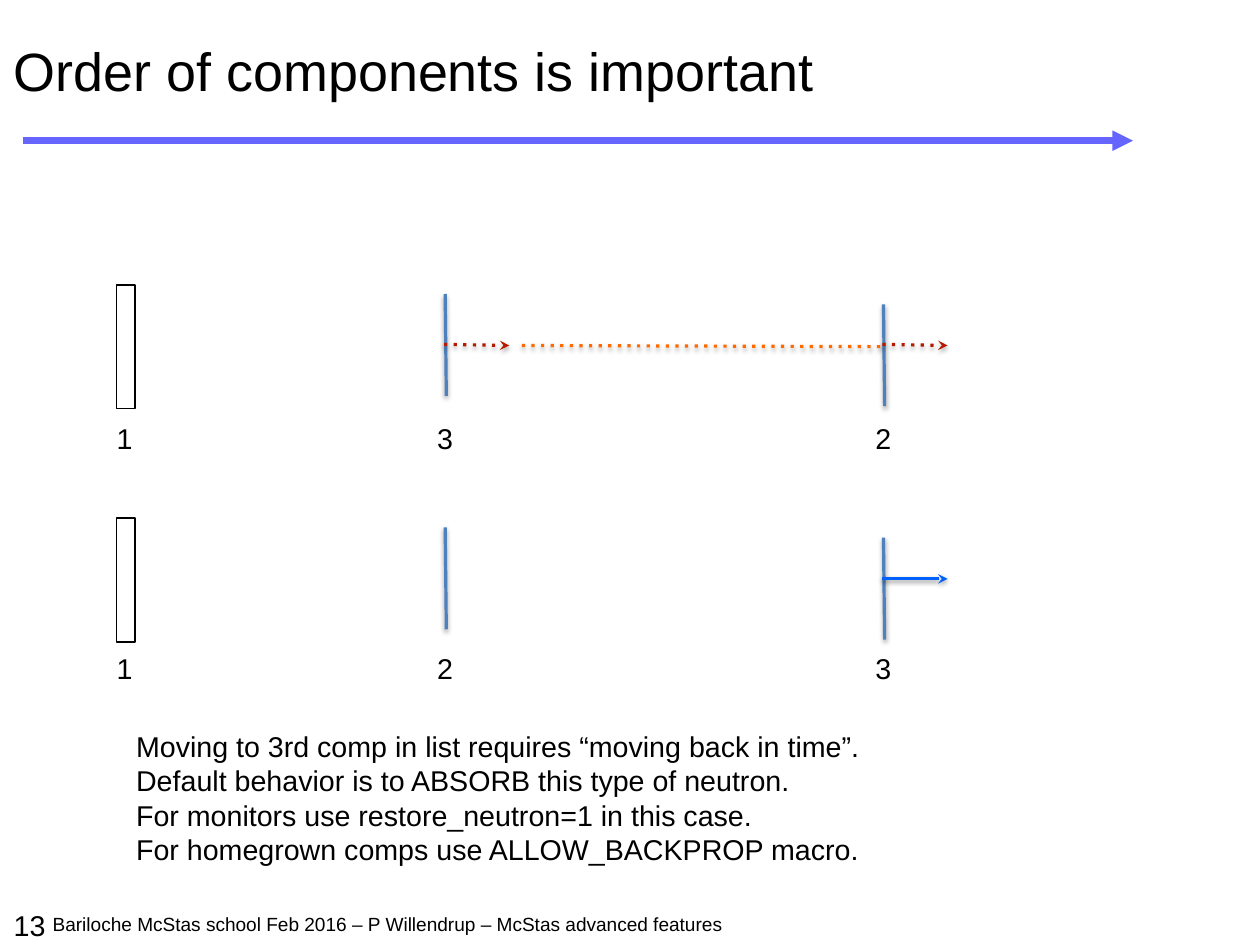
from dataclasses import dataclass

import pptx
import pptx.dml.color
import pptx.enum.shapes
import pptx.enum.text
import pptx.oxml
import pptx.oxml.ns
import pptx.util
from pptx.util import Inches

RGBColor = pptx.dml.color.RGBColor
BLACK = RGBColor(0x00, 0x00, 0x00)
VIOLET = RGBColor(0x66, 0x66, 0xFF)
STEEL_BLUE = RGBColor(0x4F, 0x81, 0xBD)
DARK_RED = RGBColor(0xB5, 0x1A, 0x00)
ORANGE = RGBColor(0xFF, 0x6A, 0x00)
BRIGHT_BLUE = RGBColor(0x00, 0x61, 0xFF)

NAMESPACE = pptx.oxml.ns.nsdecls("a")
SHADOW = (
    f'<a:effectLst {NAMESPACE}><a:outerShdw blurRad="38100" dist="20320" dir="5400000" '
    'rotWithShape="0"><a:srgbClr val="000000"><a:alpha val="38000"/></a:srgbClr>'
    "</a:outerShdw></a:effectLst>"
)
NO_SHADOW = f"<a:effectLst {NAMESPACE}/>"
DOTS = f'<a:custDash {NAMESPACE}><a:ds d="100000" sp="200000"/></a:custDash>'

SOURCE_LEFT, SOURCE_WIDTH, SOURCE_HEIGHT = 1.02, 0.16, 1.08
COMPONENT_HEIGHT = 0.89
LABEL_LEFTS = (0.99, 3.79, 7.62)
EXPLANATION = (
    "Moving to 3rd comp in list requires “moving back in time”.",
    "Default behavior is to ABSORB this type of neutron.",
    "For monitors use restore_neutron=1 in this case.",
    "For homegrown comps use ALLOW_BACKPROP macro.",
)


@dataclass(frozen=True)
class Ray:
    start: tuple[float, float]
    end: tuple[float, float]
    color: RGBColor
    width: float = 2
    arrow: str = ""
    dotted: bool = False
    shadow: bool = True


@dataclass(frozen=True)
class Beamline:
    top: float
    label_top: float
    labels: tuple[str, str, str]
    rays: tuple[Ray, ...]


@dataclass(frozen=True)
class Caption:
    left: float
    top: float
    width: float
    height: float
    lines: tuple[str, ...]
    size: float = 18
    inset: float = 0.03


BEAMLINES = (
    Beamline(2.49, 3.65, ("1", "3", "2"), (
        Ray((7.71, 3.01), (8.28, 3.02), DARK_RED, arrow="stealth", dotted=True),
        Ray((3.88, 3.01), (4.45, 3.02), DARK_RED, arrow="stealth", dotted=True),
        Ray((4.56, 3.02), (7.73, 3.03), ORANGE, dotted=True),
    )),
    Beamline(4.53, 5.66, ("1", "2", "3"), (
        Ray((7.71, 5.06), (8.28, 5.06), BRIGHT_BLUE, arrow="stealth"),
    )),
)
TITLE_ARROW = Ray((0.2, 1.23), (9.9, 1.23), VIOLET, 4.31, "triangle", shadow=False)
CAPTIONS = (
    Caption(0.41, 7.93, 5.98, 0.29,
            ("Bariloche McStas school Feb 2016 – P Willendrup – McStas advanced features",),
            size=12, inset=0.05),
    Caption(0.07, 7.89, 0.39, 0.38, ("13",), inset=0.05),
    Caption(1.16, 6.34, 7.64, 1.31, EXPLANATION),
)


def apply_format(target: object, values: dict[str, object]) -> None:
    for name, value in values.items():
        setattr(target, name, value)


def format_text(frame: pptx.text.text.TextFrame, size: float, inset: float,
                anchor: pptx.enum.text.MSO_ANCHOR, wrap: bool) -> None:
    margin = Inches(inset)
    apply_format(frame, {
        "margin_left": margin, "margin_top": margin,
        "margin_right": margin, "margin_bottom": margin,
        "vertical_anchor": anchor, "word_wrap": wrap,
        "auto_size": pptx.enum.text.MSO_AUTO_SIZE.NONE,
    })
    for paragraph in frame.paragraphs:
        paragraph.alignment = pptx.enum.text.PP_ALIGN.LEFT
        apply_format(paragraph.font, {"name": "Arial", "size": pptx.util.Pt(size)})
        paragraph.font.color.rgb = BLACK


def add_title(slide: pptx.slide.Slide) -> None:
    title = slide.shapes.title
    apply_format(title, {
        "left": Inches(0.12), "top": Inches(0.21),
        "width": Inches(7.16), "height": Inches(0.87),
    })
    title.text_frame.text = "Order of components is important"
    title.text_frame.paragraphs[0].line_spacing = 0.9
    format_text(title.text_frame, 33.9, 0, pptx.enum.text.MSO_ANCHOR.MIDDLE, True)


def add_caption(slide: pptx.slide.Slide, caption: Caption) -> None:
    box = slide.shapes.add_textbox(Inches(caption.left), Inches(caption.top),
                                   Inches(caption.width), Inches(caption.height))
    box.text_frame.text = "\n".join(caption.lines)
    format_text(box.text_frame, caption.size, caption.inset,
                pptx.enum.text.MSO_ANCHOR.TOP, False)


def add_ray(slide: pptx.slide.Slide, ray: Ray) -> None:
    connector = slide.shapes.add_connector(
        pptx.enum.shapes.MSO_CONNECTOR.STRAIGHT,
        *(Inches(value) for value in ray.start + ray.end))
    connector.line.color.rgb = ray.color
    connector.line.width = pptx.util.Pt(ray.width)
    properties = connector._element.spPr
    outline = connector.line._get_or_add_ln()
    if ray.dotted:
        outline.append(pptx.oxml.parse_xml(DOTS))
    if ray.arrow:
        outline.append(pptx.oxml.parse_xml(f'<a:tailEnd {NAMESPACE} type="{ray.arrow}"/>'))
    properties.append(pptx.oxml.parse_xml(SHADOW if ray.shadow else NO_SHADOW))


def add_source(slide: pptx.slide.Slide, top: float) -> None:
    source = slide.shapes.add_shape(
        pptx.enum.shapes.MSO_SHAPE.RECTANGLE, Inches(SOURCE_LEFT), Inches(top),
        Inches(SOURCE_WIDTH), Inches(SOURCE_HEIGHT))
    source.shadow.inherit = False
    source.fill.background()
    source.line.color.rgb = BLACK
    source.line.width = pptx.util.Pt(1)


def add_beamline(slide: pptx.slide.Slide, beamline: Beamline) -> None:
    """Draw the source, its two components, their labels and the neutron rays."""
    add_source(slide, beamline.top)
    for left, drop in ((3.89, 0.08), (7.72, 0.17)):
        top = beamline.top + drop
        add_ray(slide, Ray((left, top), (left + 0.01, top + COMPONENT_HEIGHT), STEEL_BLUE))
    for left, label in zip(LABEL_LEFTS, beamline.labels):
        add_caption(slide, Caption(left, beamline.label_top, 0.24, 0.38, (label,)))
    for ray in beamline.rays:
        add_ray(slide, ray)


def main() -> None:
    presentation = pptx.Presentation()
    presentation.slide_width = Inches(11.01)
    presentation.slide_height = Inches(8.26)
    slide = presentation.slides.add_slide(presentation.slide_layouts.get_by_name("Title Only"))
    add_title(slide)
    add_ray(slide, TITLE_ARROW)
    for beamline in BEAMLINES:
        add_beamline(slide, beamline)
    for caption in CAPTIONS:
        add_caption(slide, caption)
    presentation.save("out.pptx")


if __name__ == "__main__":
    main()
